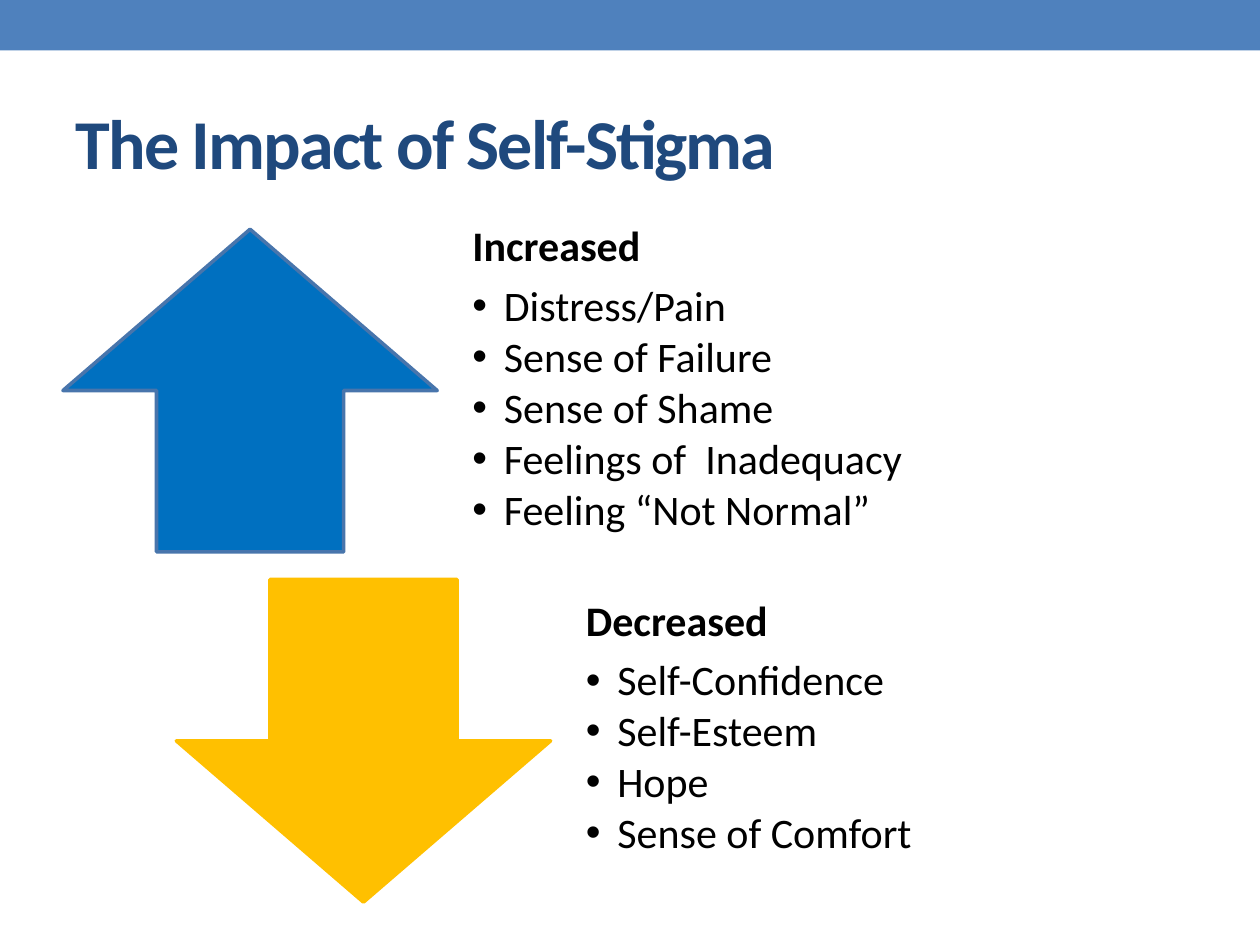
from dataclasses import dataclass

from lxml import etree
from pptx import Presentation
from pptx.dml.color import RGBColor
from pptx.enum.shapes import MSO_SHAPE
from pptx.enum.text import MSO_ANCHOR
from pptx.oxml.ns import qn
from pptx.util import Inches, Pt

RECTANGLE = MSO_SHAPE.RECTANGLE
UP_ARROW = MSO_SHAPE.UP_ARROW
DOWN_ARROW = MSO_SHAPE.DOWN_ARROW
MIDDLE = MSO_ANCHOR.MIDDLE
BLANK_LAYOUT = 6


@dataclass(frozen=True)
class Theme:
    font: str = "Calibri"
    title_size: float = 40
    body_size: float = 24
    heading_gap: float = 8
    bullet_gap: float = 3.2
    line_width: float = 2.08
    line_spacing: float = 0.9
    band: str = "4F81BD"
    title: str = "1F497D"
    text: str = "000000"


@dataclass(frozen=True)
class Box:
    left: float
    top: float
    width: float
    height: float

    def lengths(self) -> list:
        return [Inches(value) for value in (self.left, self.top, self.width, self.height)]


@dataclass(frozen=True)
class Effect:
    heading: str
    items: tuple
    arrow: MSO_SHAPE
    arrow_box: Box
    text_box: Box
    fill: str
    line: str


THEME = Theme()
EFFECTS = (
    Effect(
        "Increased",
        ("Distress/Pain", "Sense of Failure", "Sense of Shame",
         "Feelings of  Inadequacy", "Feeling “Not Normal”"),
        UP_ARROW, Box(0.5, 1.82, 2.97, 2.56), Box(3.56, 1.68, 5.04, 2.86),
        "0070C0", "4875AC",
    ),
    Effect(
        "Decreased",
        ("Self-Confidence", "Self-Esteem", "Hope", "Sense of Comfort"),
        DOWN_ARROW, Box(1.4, 4.6, 2.97, 2.56), Box(4.46, 4.6, 5.04, 2.56),
        "FFC000", "FFC000",
    ),
)


def apply_format(target, values: dict) -> None:
    for name, value in values.items():
        setattr(target, name, value)


def add_filled_shape(slide, kind: MSO_SHAPE, box: Box, fill: str, line: str = ""):
    shape = slide.shapes.add_shape(kind, *box.lengths())
    shape.shadow.inherit = False
    shape.fill.solid()
    shape.fill.fore_color.rgb = RGBColor.from_string(fill)
    if line:
        shape.line.color.rgb = RGBColor.from_string(line)
        shape.line.width = Pt(THEME.line_width)
    else:
        shape.line.fill.background()
    return shape


def add_text_frame(slide, box: Box, margins: tuple):
    frame = slide.shapes.add_textbox(*box.lengths()).text_frame
    left, top, right, bottom = (Inches(value) for value in margins)
    apply_format(frame, {
        "word_wrap": True, "vertical_anchor": MIDDLE,
        "margin_left": left, "margin_top": top,
        "margin_right": right, "margin_bottom": bottom,
    })
    return frame


def add_run(paragraph, text: str, size: float, color: str, bold: bool):
    run = paragraph.add_run()
    run.text = text
    apply_format(run.font, {"name": THEME.font, "size": Pt(size), "bold": bold})
    run.font.color.rgb = RGBColor.from_string(color)
    return run


def add_bullet(paragraph) -> None:
    properties = paragraph._p.get_or_add_pPr()
    properties.set("marL", str(Inches(0.25)))
    properties.set("indent", str(-Inches(0.25)))
    etree.SubElement(properties, qn("a:buFont")).set("typeface", "Arial")
    etree.SubElement(properties, qn("a:buChar")).set("char", "•")


def add_title(slide, text: str) -> None:
    frame = add_text_frame(slide, Box(0.5, 0.58, 9, 1.08), (0.1, 0.05, 0.1, 0.05))
    run = add_run(frame.paragraphs[0], text, THEME.title_size, THEME.title, True)
    run.font._element.set("spc", "-100")


def add_effect(slide, effect: Effect) -> None:
    add_filled_shape(slide, effect.arrow, effect.arrow_box, effect.fill, effect.line)
    frame = add_text_frame(slide, effect.text_box, (0.19, 0, 0.19, 0.19))
    for index, text in enumerate((effect.heading, *effect.items)):
        is_heading = index == 0
        paragraph = frame.paragraphs[0] if is_heading else frame.add_paragraph()
        gap = THEME.heading_gap if is_heading else THEME.bullet_gap
        apply_format(paragraph, {
            "line_spacing": THEME.line_spacing, "space_after": Pt(gap),
        })
        if not is_heading:
            add_bullet(paragraph)
        add_run(paragraph, text, THEME.body_size, THEME.text, is_heading)


def main() -> None:
    presentation = Presentation()
    apply_format(presentation, {"slide_width": Inches(10), "slide_height": Inches(7.5)})
    slide = presentation.slides.add_slide(presentation.slide_layouts[BLANK_LAYOUT])
    add_filled_shape(slide, RECTANGLE, Box(0, 0, 10, 0.4), THEME.band)
    add_title(slide, "The Impact of Self-Stigma")
    for effect in EFFECTS:
        add_effect(slide, effect)
    presentation.save("out.pptx")


if __name__ == "__main__":
    main()
